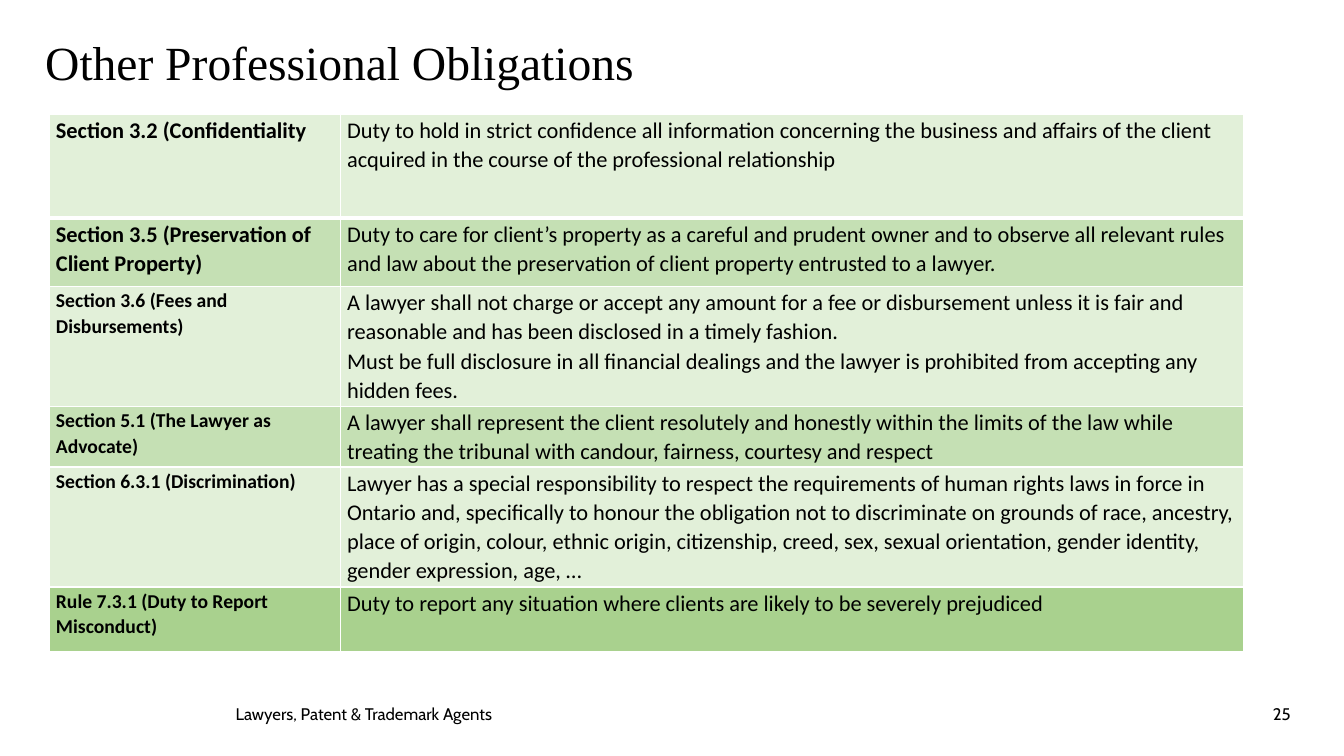
"""Build the slide listing a lawyer's other professional obligations."""
import pptx
import pptx.dml.color
import pptx.enum.text
import pptx.oxml
import pptx.oxml.ns
import pptx.util

Pt = pptx.util.Pt
RGBColor = pptx.dml.color.RGBColor
ALIGN = pptx.enum.text.PP_ALIGN
ANCHOR = pptx.enum.text.MSO_ANCHOR

BLACK = RGBColor(0x00, 0x00, 0x00)
WHITE = RGBColor(0xFF, 0xFF, 0xFF)
PALE_GREEN = RGBColor(0xE2, 0xF0, 0xD9)
LIGHT_GREEN = RGBColor(0xC5, 0xE0, 0xB4)
GREEN = RGBColor(0xA9, 0xD1, 0x8E)

COLUMN_WIDTHS = (208, 645)
OBLIGATIONS = [
    (74.2, PALE_GREEN, 16, "Section 3.2 (Confidentiality",
     ["Duty to hold in strict confidence all information concerning the business and affairs "
      "of the client acquired in the course of the professional relationship"]),
    (49, LIGHT_GREEN, 16, "Section 3.5 (Preservation of Client Property)",
     ["Duty to care for client’s property as a careful and prudent owner and to observe all "
      "relevant rules and law about the preservation of client property entrusted to a lawyer."]),
    (85.7, PALE_GREEN, 14, "Section 3.6 (Fees and Disbursements)",
     ["A lawyer shall not charge or accept any amount for a fee or disbursement unless it is "
      "fair and reasonable and has been disclosed in a timely fashion.",
      "Must be full disclosure in all financial dealings and the lawyer is prohibited from "
      "accepting any hidden fees."]),
    (43.2, LIGHT_GREEN, 14, "Section 5.1 (The Lawyer as Advocate)",
     ["A lawyer shall represent the client resolutely and honestly within the limits of the law "
      "while treating the tribunal with candour, fairness, courtesy and respect"]),
    (85.7, PALE_GREEN, 14, "Section 6.3.1 (Discrimination)",
     ["Lawyer has a special responsibility to respect the requirements of human rights laws in "
      "force in Ontario and, specifically to honour the obligation not to discriminate on "
      "grounds of race, ancestry, place of origin, colour, ethnic origin, citizenship, creed, "
      "sex, sexual orientation, gender identity, gender expression, age, …"]),
    (46.1, GREEN, 14, "Rule 7.3.1 (Duty to Report Misconduct)",
     ["Duty to report any situation where clients are likely to be severely prejudiced"]),
]


def add_paragraphs(frame, texts, font, size, bold=False, align=ALIGN.LEFT, spacing=1.0):
    """Write one paragraph per text into the frame."""
    for index, text in enumerate(texts):
        paragraph = frame.paragraphs[0] if index == 0 else frame.add_paragraph()
        paragraph.alignment = align
        paragraph.line_spacing = spacing
        run = paragraph.add_run()
        run.text = text
        run.font.name = font
        run.font.size = Pt(size)
        run.font.bold = bold
        run.font.color.rgb = BLACK


def add_label(slide, box, text, font, size, **style):
    """Place a single line of text in the given box."""
    frame = slide.shapes.add_textbox(*map(Pt, box)).text_frame
    frame.word_wrap = True
    frame.vertical_anchor = ANCHOR.TOP
    add_paragraphs(frame, [text], font, size, **style)


def set_borders(cell, top, bottom):
    """Give a cell white borders, with its own top and bottom widths."""
    properties = cell._tc.get_or_add_tcPr()
    for side, width in (("L", 1), ("R", 1), ("T", top), ("B", bottom)):
        properties.append(pptx.oxml.parse_xml(
            f'<a:ln{side} {pptx.oxml.ns.nsdecls("a")} w="{Pt(width)}">'
            f'<a:solidFill><a:srgbClr val="{WHITE}"/></a:solidFill></a:ln{side}>'))


def add_obligations(slide, left, top):
    """Place the table of rules and the duties they impose."""
    height = sum(row[0] for row in OBLIGATIONS)
    table = slide.shapes.add_table(
        len(OBLIGATIONS), len(COLUMN_WIDTHS),
        Pt(left), Pt(top), Pt(sum(COLUMN_WIDTHS)), Pt(height)).table
    table.first_row = table.horz_banding = False
    for column, width in zip(table.columns, COLUMN_WIDTHS):
        column.width = Pt(width)
    for index, (row_height, fill, rule_size, rule, duties) in enumerate(OBLIGATIONS):
        row = table.rows[index]
        row.height = Pt(row_height)
        for cell in row.cells:
            set_borders(cell, 3 if index == 1 else 1, 3 if index == 0 else 1)
            cell.fill.solid()
            cell.fill.fore_color.rgb = fill
            cell.margin_left = cell.margin_right = Pt(4.5)
            cell.margin_top, cell.margin_bottom = Pt(0.6), Pt(0)
        rule_cell, duty_cell = row.cells
        add_paragraphs(rule_cell.text_frame, [rule], "Calibri", rule_size,
                       bold=True, spacing=1.07)
        add_paragraphs(duty_cell.text_frame, duties, "Calibri", 16, spacing=1.07)


def add_footer(slide, top):
    """Place the footer text and the page number."""
    add_label(slide, (161.3, top, 242, 21.6), "Lawyers, Patent & Trademark Agents", "Cabin", 12)
    add_label(slide, (687, top, 242, 21.6), "25", "Cabin", 12, align=ALIGN.RIGHT)


def main():
    """Build and save the slide."""
    deck = pptx.Presentation()
    deck.slide_width, deck.slide_height = Pt(960), Pt(540)
    slide = deck.slides.add_slide(deck.slide_layouts[6])
    add_footer(slide, 499)
    add_label(slide, (25.2, 24.5, 872.6, 50.4), "Other Professional Obligations",
              "Times New Roman", 34, spacing=0.9)
    add_obligations(slide, 35.5, 81.5)
    deck.save("out.pptx")


if __name__ == "__main__":
    main()
